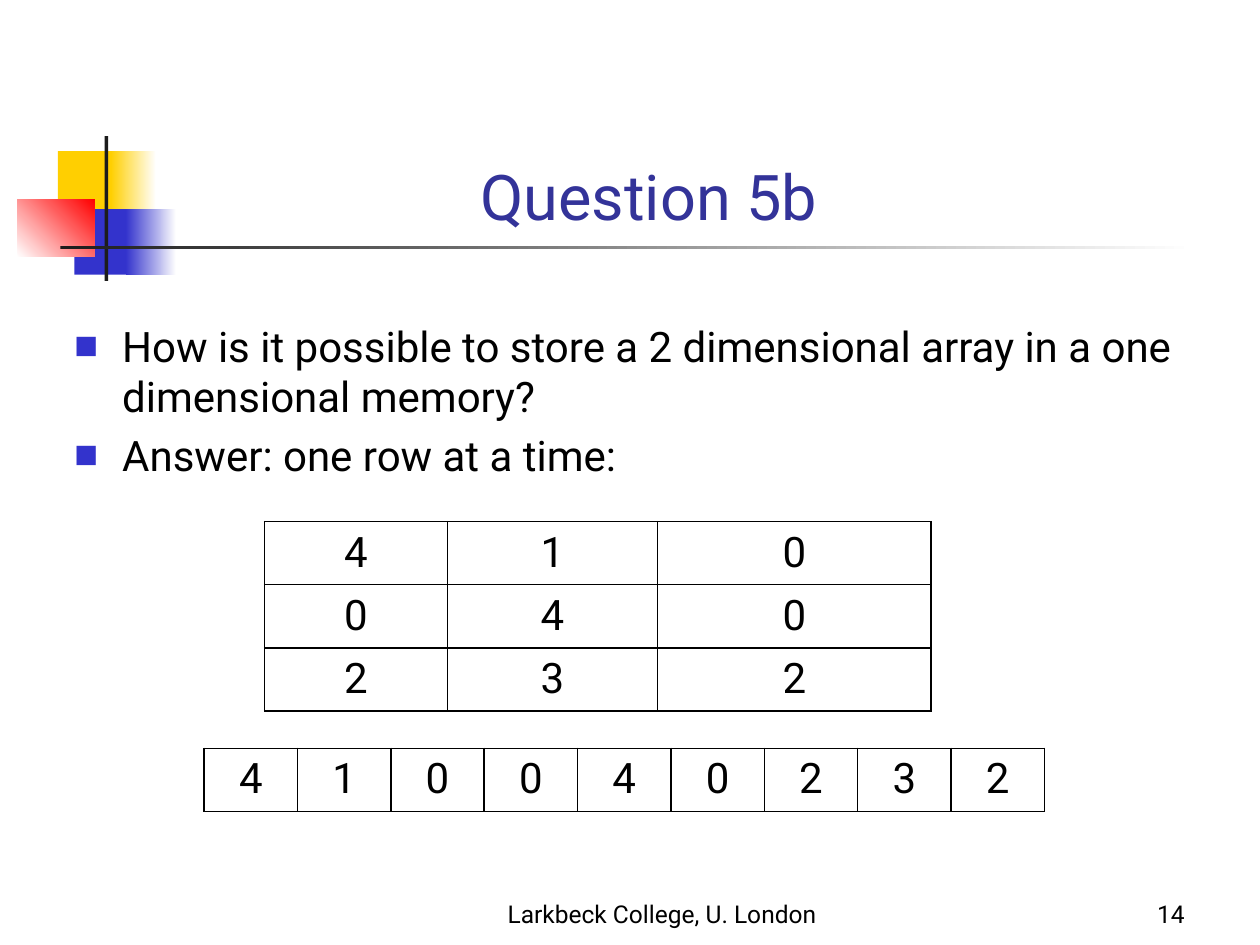
from lxml import etree
from pptx import Presentation, util as u
from pptx.dml.color import RGBColor
from pptx.enum import shapes, text as tx
from pptx.oxml import ns

YELLOW = RGBColor(0xFF, 0xCF, 0x01)
BLUE = RGBColor(0x33, 0x33, 0xCC)
RED = RGBColor(0xFF, 0, 0)
CHARCOAL = RGBColor(0x1C, 0x1C, 0x1C)
INDIGO = RGBColor(0x33, 0x33, 0x99)
BLACK = RGBColor(0, 0, 0)
WHITE = RGBColor(0xFF, 0xFF, 0xFF)

deck = Presentation()
deck.slide_width, deck.slide_height = u.Inches(10), u.Inches(7.5)
slide = deck.slides.add_slide(deck.slide_layouts[1])


def share(left, top, width, height):
    across, down = deck.slide_width / 100, deck.slide_height / 100
    return int(left * across), int(top * down), int(width * across), int(height * down)


def write(paragraph, words, size=24, color=BLACK, align=tx.PP_ALIGN.CENTER):
    paragraph.alignment = align
    run = paragraph.add_run()
    run.text = words
    run.font.name, run.font.size = "Roboto", u.Pt(size)
    run.font.color.rgb = color


ornament = [
    (4.6, 16, 4.8, 6.93, YELLOW, YELLOW, 0),
    (8.8, 16, 3.6, 6.93, YELLOW, WHITE, 0),
    (5.9, 22.13, 4.6, 6.93, BLUE, BLUE, 0),
    (10, 22.13, 4, 6.93, BLUE, WHITE, 0),
    (1.4, 21.07, 6.1, 6.13, WHITE, RED, 45),
    (8.3, 14.4, 0.3, 15.33, CHARCOAL, CHARCOAL, 0),
    (4.8, 26, 90, 0.4, CHARCOAL, WHITE, 0),
]
for *place, start, end, angle in ornament:
    patch = slide.shapes.add_shape(shapes.MSO_SHAPE.RECTANGLE, *share(*place))
    patch.shadow.inherit = False
    patch.line.fill.background()
    if start == end:
        patch.fill.solid()
        patch.fill.fore_color.rgb = start
    else:
        patch.fill.gradient()
        patch.fill.gradient_angle = angle
        for stop, color in zip(patch.fill.gradient_stops, (start, end)):
            stop.color.rgb = color

heading = slide.shapes.title
heading.left, heading.top, heading.width, heading.height = share(8.9, 8.67, 85.2, 16.67)
heading.text_frame.auto_size = tx.MSO_AUTO_SIZE.NONE
heading.text_frame.vertical_anchor = tx.MSO_ANCHOR.BOTTOM
write(heading.text_frame.paragraphs[0], "Question 5b", size=36, color=INDIGO)

question = slide.placeholders[1]
question.left, question.top, question.width, question.height = share(4.9, 33.2, 89.1, 22)
question.text_frame.auto_size = tx.MSO_AUTO_SIZE.NONE
points = [
    "How is it possible to store a 2 dimensional array in a one dimensional memory?",
    "Answer: one row at a time:",
]
for i, point in enumerate(points):
    line = question.text_frame.add_paragraph() if i else question.text_frame.paragraphs[0]
    write(line, point, align=tx.PP_ALIGN.LEFT)
    line.space_before = u.Pt(4.8)
    props = line._p.get_or_add_pPr()
    props.set("marL", str(u.Inches(0.38)))
    props.set("indent", str(u.Inches(-0.38)))
    bullet_color = etree.SubElement(props, ns.qn("a:buClr"))
    etree.SubElement(bullet_color, ns.qn("a:srgbClr"), val=str(BLUE))
    etree.SubElement(props, ns.qn("a:buSzPct"), val="60000")
    etree.SubElement(props, ns.qn("a:buFont"), typeface="Roboto")
    etree.SubElement(props, ns.qn("a:buChar"), char="■")

footers = [
    (36.7, 31.7, "Larkbeck College, U. London", tx.PP_ALIGN.CENTER),
    (74.2, 20.8, "14", tx.PP_ALIGN.RIGHT),
]
for left, width, words, align in footers:
    footer = slide.shapes.add_textbox(*share(left, 92.27, width, 6.67)).text_frame
    footer.word_wrap = True
    footer.vertical_anchor = tx.MSO_ANCHOR.BOTTOM
    write(footer.paragraphs[0], words, size=14, align=align)

matrix = [[4, 1, 0], [0, 4, 0], [2, 3, 2]]
memory = [sum(matrix, [])]
arrays = [
    (21, 55.2, [14.5, 16.7, 21.7], matrix),
    (16.2, 79.2, [66.7 / 9] * 9, memory),
]
for left, top, widths, rows in arrays:
    place = share(left, top, sum(widths), 5.47 * len(rows))
    grid = slide.shapes.add_table(len(rows), len(widths), *place).table
    grid.first_row = grid.horz_banding = False
    for column, width in zip(grid.columns, widths):
        column.width = int(deck.slide_width * width / 100)
    for r, row in enumerate(rows):
        for c, value in enumerate(row):
            cell = grid.cell(r, c)
            write(cell.text_frame.paragraphs[0], str(value))
            for side in ("lnL", "lnR", "lnT", "lnB"):
                border = etree.SubElement(
                    cell._tc.get_or_add_tcPr(), ns.qn("a:" + side), w=str(u.Pt(1)))
                paint = etree.SubElement(border, ns.qn("a:solidFill"))
                etree.SubElement(paint, ns.qn("a:srgbClr"), val=str(BLACK))
            cell.fill.solid()
            cell.fill.fore_color.rgb = WHITE

deck.save("out.pptx")
